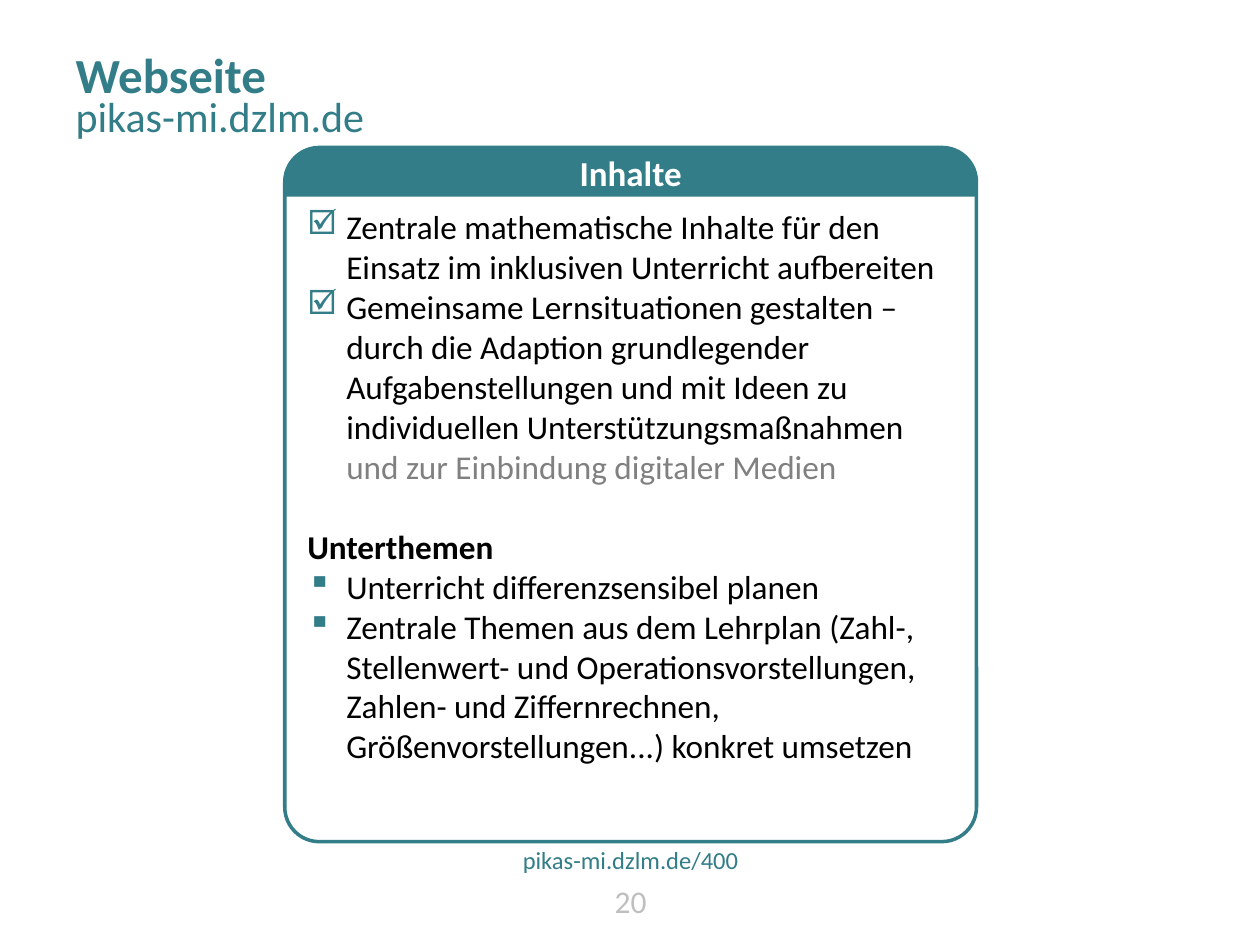
import math

import pptx
import pptx.dml.color
import pptx.enum.shapes
import pptx.enum.text
import pptx.oxml
import pptx.oxml.ns
import pptx.util

COLORS = {
    "teal": "327D87",
    "black": "000000",
    "white": "FFFFFF",
    "gray": "808080",
    "light": "BFBFBF",
}
COLUMNS, ROWS = 20, 15
CENTER = pptx.enum.text.PP_ALIGN.CENTER
MIDDLE = pptx.enum.text.MSO_ANCHOR.MIDDLE
TOP = pptx.enum.text.MSO_ANCHOR.TOP
CARD = (4.52, 2.34, 10.98, 11.02)
HEADER_ROWS = 0.78
CORNER = 0.5

CARD_ITEMS = [
    ("☑", "Zentrale mathematische Inhalte für den Einsatz im inklusiven "
          "Unterricht aufbereiten", ""),
    ("☑", "Gemeinsame Lernsituationen gestalten – \n"
          "durch die Adaption grundlegender Aufgabenstellungen und mit Ideen zu "
          "individuellen Unterstützungsmaßnahmen \n",
     "und zur Einbindung digitaler Medien"),
    (None, "Unterthemen", ""),
    ("▪", "Unterricht differenzsensibel planen", ""),
    ("▪", "Zentrale Themen aus dem Lehrplan (Zahl-, Stellenwert- und "
          "Operationsvorstellungen, Zahlen- und Ziffernrechnen, "
          "Größenvorstellungen...) konkret umsetzen", ""),
]


def rgb(name):
    return pptx.dml.color.RGBColor.from_string(COLORS[name])


class SlideBuilder:
    """Style and current slide; lengths are columns and rows of the grid."""

    def __init__(self, presentation):
        self.presentation = presentation
        self.font_name = "Calibri"
        self.slide = presentation.slides.add_slide(presentation.slide_layouts[1])

    def box(self, left, top, width, height):
        column = self.presentation.slide_width / COLUMNS
        row = self.presentation.slide_height / ROWS
        return (round(left * column), round(top * row),
                round(width * column), round(height * row))

    def format(self, paragraph, size, color, bold=False, alignment=None):
        paragraph.alignment = alignment
        paragraph.font.name = self.font_name
        paragraph.font.size = pptx.util.Pt(size)
        paragraph.font.bold = bold
        paragraph.font.color.rgb = rgb(color)

    def bullet(self, paragraph, character=None):
        """Set a hanging teal bullet, or switch off an inherited one."""
        properties = paragraph._p.get_or_add_pPr()
        indent = pptx.util.Inches(0.31) if character else 0
        properties.set("marL", str(indent))
        properties.set("indent", str(-indent))
        namespace = pptx.oxml.ns.nsdecls("a")
        if not character:
            properties.append(pptx.oxml.parse_xml(f"<a:buNone {namespace}/>"))
            return
        properties.append(pptx.oxml.parse_xml(
            f'<a:buClr {namespace}><a:srgbClr val="{COLORS["teal"]}"/></a:buClr>'))
        properties.append(pptx.oxml.parse_xml(
            f'<a:buChar {namespace} char="{character}"/>'))

    def placeholder(self, index, box, text, size, bold=False, top_inset=0.0):
        shape = self.slide.placeholders[index]
        shape.left, shape.top, shape.width, shape.height = self.box(*box)
        frame = shape.text_frame
        frame.text = text
        frame.auto_size = pptx.enum.text.MSO_AUTO_SIZE.NONE
        frame.vertical_anchor = TOP
        frame.margin_top = pptx.util.Inches(top_inset)
        paragraph = frame.paragraphs[0]
        self.bullet(paragraph)
        paragraph.space_before = pptx.util.Pt(0)
        self.format(paragraph, size, "teal", bold, pptx.enum.text.PP_ALIGN.LEFT)

    def label(self, box, text, size, color, wrap=True):
        frame = self.slide.shapes.add_textbox(*self.box(*box)).text_frame
        frame.word_wrap = wrap
        frame.vertical_anchor = MIDDLE
        frame.text = text
        self.format(frame.paragraphs[0], size, color, alignment=CENTER)

    def card(self, box, items):
        shape = self.slide.shapes.add_shape(
            pptx.enum.shapes.MSO_SHAPE.ROUNDED_RECTANGLE, *self.box(*box))
        shape.adjustments[0] = 0.05
        shape.shadow.inherit = False
        shape.fill.solid()
        shape.fill.fore_color.rgb = rgb("white")
        shape.line.color.rgb = rgb("teal")
        shape.line.width = pptx.util.Pt(2)
        frame = shape.text_frame
        frame.word_wrap = True
        frame.vertical_anchor = TOP
        frame.margin_top = pptx.util.Inches(0.39)
        for number, (character, text, muted) in enumerate(items):
            paragraph = frame.paragraphs[0] if number == 0 else frame.add_paragraph()
            self.bullet(paragraph, character)
            paragraph.text = text.replace("\n", "\v")
            self.format(paragraph, 19, "black", character is None,
                        pptx.enum.text.PP_ALIGN.LEFT)
            if character is None:
                paragraph.space_before = pptx.util.Pt(23)
            if muted:
                run = paragraph.add_run()
                run.text = muted
                run.font.color.rgb = rgb("gray")

    def header(self, box, corner, text):
        """Draw a band whose two upper corners are rounded."""
        left, top, width, height = self.box(*box)
        radius = self.box(corner, 0, 0, 0)[0]
        points = [(left, top + height)]
        for center, start in ((left + radius, 180), (left + width - radius, 270)):
            for degrees in range(start, start + 91, 6):
                angle = math.radians(degrees)
                points.append((round(center + radius * math.cos(angle)),
                               round(top + radius + radius * math.sin(angle))))
        points.append((left + width, top + height))
        builder = self.slide.shapes.build_freeform(*points[0])
        builder.add_line_segments(points[1:], close=True)
        shape = builder.convert_to_shape()
        shape.shadow.inherit = False
        shape.fill.solid()
        shape.fill.fore_color.rgb = rgb("teal")
        shape.line.fill.background()
        frame = shape.text_frame
        frame.vertical_anchor = MIDDLE
        frame.text = text
        self.format(frame.paragraphs[0], 20, "white", True, CENTER)


def main():
    presentation = pptx.Presentation()
    presentation.slide_width = pptx.util.Inches(10)
    presentation.slide_height = pptx.util.Inches(7.5)
    builder = SlideBuilder(presentation)
    builder.placeholder(0, (1, 0.6, 18, 0.84), "Webseite", 28, True, 0.05)
    builder.placeholder(1, (1, 1.44, 18, 1.54), "pikas-mi.dzlm.de", 24)
    builder.label((6.84, 13.9, 6.34, 0.8), "20", 18, "light")
    builder.label((8.08, 13.3, 3.86, 0.68), "pikas-mi.dzlm.de/400", 14, "teal",
                  wrap=False)
    builder.card(CARD, CARD_ITEMS)
    builder.header((*CARD[:3], HEADER_ROWS), CORNER, "Inhalte")
    presentation.save("out.pptx")


if __name__ == "__main__":
    main()
